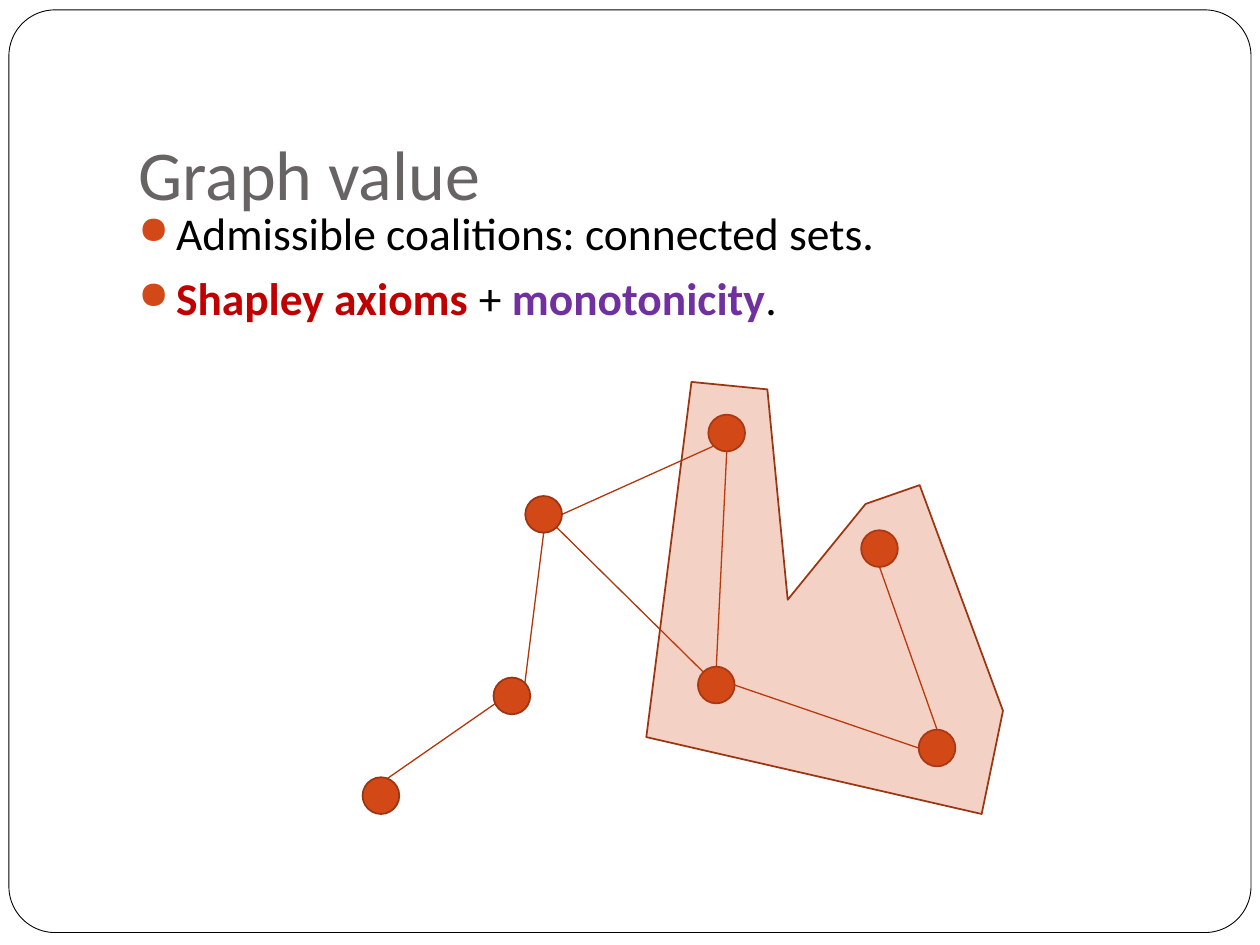
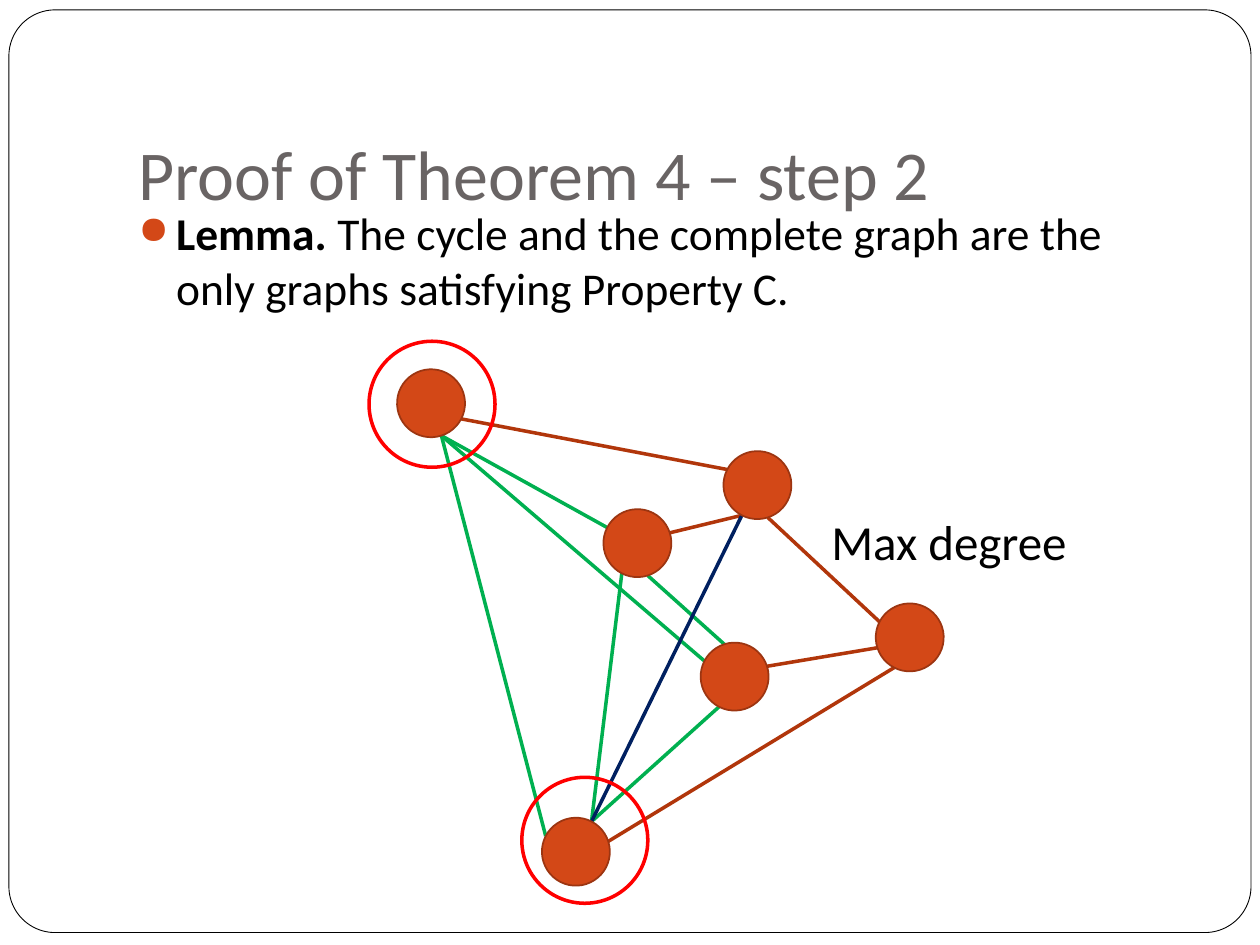
"""Build two graph theory slides: graph value and a lemma proof."""
from math import cos, radians, sin
from typing import NamedTuple

from lxml import etree
from pptx import Presentation
from pptx.dml.color import RGBColor
from pptx.enum.shapes import MSO_CONNECTOR, MSO_SHAPE
from pptx.enum.text import MSO_ANCHOR, MSO_AUTO_SIZE, PP_ALIGN
from pptx.oxml.ns import qn
from pptx.util import Cm, Pt

OVAL = MSO_SHAPE.OVAL
ROUND = MSO_SHAPE.ROUNDED_RECTANGLE
STRAIGHT = MSO_CONNECTOR.STRAIGHT
LEFT = PP_ALIGN.LEFT
BOTTOM = MSO_ANCHOR.BOTTOM
NO_FIT = MSO_AUTO_SIZE.NONE
FIT = MSO_AUTO_SIZE.SHAPE_TO_FIT_TEXT

FONT = "Calibri"
TITLE_ONLY = 5
COLORS = {
    "white": "FFFFFF", "black": "000000", "grey": "696464",
    "orange": "D34817", "rim": "9C3511", "edge": "B1360B",
    "crimson": "C00000", "purple": "7030A0",
    "green": "00B050", "navy": "002060", "red": "FF0000",
}

TOP, TOP_LEFT, SIDE_L, LOW_LEFT, LOW, LOW_RIGHT, SIDE_R, TOP_RIGHT = range(8)


class Span(NamedTuple):
    text: str
    color: str = "black"
    bold: bool = False


class Node(NamedTuple):
    x: float
    y: float


class Edge(NamedTuple):
    start: str
    out: int
    end: str
    into: int
    color: str = "edge"


class Graph(NamedTuple):
    nodes: dict[str, Node]
    edges: list[Edge]
    size: float
    turn: float
    width: float


VALUE = Graph(
    nodes={
        "a": Node(7.68, 16.04), "b": Node(10.32, 14.03), "c": Node(14.44, 13.81),
        "d": Node(17.73, 11.06), "e": Node(10.96, 10.37), "f": Node(14.65, 8.73),
        "g": Node(18.89, 15.08),
    },
    edges=[
        Edge("a", SIDE_L, "b", TOP_RIGHT),
        Edge("b", TOP_RIGHT, "e", LOW),
        Edge("c", TOP_LEFT, "e", LOW_RIGHT),
        Edge("e", SIDE_R, "f", LOW_LEFT),
        Edge("c", TOP, "f", LOW),
        Edge("g", TOP, "d", LOW),
        Edge("g", SIDE_L, "c", SIDE_R),
    ],
    size=0.74, turn=0, width=0.75,
)

PROOF = Graph(
    nodes={
        "p": Node(14.81, 13.64), "q": Node(18.34, 12.85), "r": Node(12.85, 10.95),
        "s": Node(11.61, 17.17), "t": Node(15.27, 9.78), "u": Node(8.69, 8.13),
    },
    edges=[
        Edge("p", TOP_RIGHT, "q", LOW_LEFT),
        Edge("q", LOW, "s", TOP_RIGHT),
        Edge("q", SIDE_L, "t", LOW_RIGHT),
        Edge("r", TOP_RIGHT, "t", LOW),
        Edge("u", SIDE_R, "t", SIDE_L),
        Edge("u", LOW_RIGHT, "r", SIDE_L, "green"),
        Edge("s", TOP, "r", LOW, "green"),
        Edge("u", LOW_RIGHT, "s", SIDE_L, "green"),
        Edge("p", LOW, "s", TOP, "green"),
        Edge("p", TOP_LEFT, "r", LOW_RIGHT, "green"),
        Edge("p", SIDE_L, "u", LOW_RIGHT, "green"),
        Edge("t", LOW, "s", TOP, "navy"),
    ],
    size=1.37, turn=27.3, width=2,
)

RINGS = [Node(8.71, 8.15), Node(11.79, 16.94)]
REGION = [
    (17.45, 10.16), (15.88, 12.09), (15.47, 7.85), (13.94, 7.7),
    (13.03, 14.86), (19.79, 16.41), (20.22, 14.33), (18.54, 9.78),
]


def rgb(name: str) -> RGBColor:
    return RGBColor.from_string(COLORS[name])


def paint(shape, fill: str | None, line: str, width: float) -> None:
    shape.shadow.inherit = False
    if fill:
        shape.fill.solid()
        shape.fill.fore_color.rgb = rgb(fill)
    else:
        shape.fill.background()
    shape.line.color.rgb = rgb(line)
    shape.line.width = Pt(width)


def style(para, size: float, color: str) -> None:
    para.alignment = LEFT
    para.font.name = FONT
    para.font.size = Pt(size)
    para.font.color.rgb = rgb(color)


def add_page(deck, title: str):
    slide = deck.slides.add_slide(deck.slide_layouts[TITLE_ONLY])
    head = slide.shapes.title
    frame = slide.shapes.add_shape(ROUND, Cm(0.18), Cm(0.2), Cm(25.04), Cm(18.6))
    frame.adjustments[0] = 0.05
    paint(frame, "white", "black", 0.5)
    head._element.addprevious(frame._element)
    head.left, head.top, head.width, head.height = Cm(2.54), Cm(0.76), Cm(21.59), Cm(3.81)
    text = head.text_frame
    text.text = title
    text.auto_size = NO_FIT
    text.vertical_anchor = BOTTOM
    text.margin_bottom = Cm(0.25)
    style(text.paragraphs[0], 40, "grey")
    return slide


def add_bullet(para) -> None:
    props = para._p.get_or_add_pPr()
    props.set("marL", str(Cm(0.76)))
    props.set("indent", str(-Cm(0.76)))
    marks = [etree.Element(qn(tag)) for tag in ("a:buClr", "a:buSzPct", "a:buChar")]
    etree.SubElement(marks[0], qn("a:srgbClr"), val=COLORS["orange"])
    marks[1].set("val", "85000")
    marks[2].set("char", "●")
    last = props.find(qn("a:defRPr"))
    for mark in marks:
        last.addprevious(mark)


def add_body(slide, points: list[list[Span]]) -> None:
    box = slide.shapes.add_textbox(Cm(2.54), Cm(4.01), Cm(21.59), Cm(12.7))
    text = box.text_frame
    text.word_wrap = True
    for i, spans in enumerate(points):
        para = text.add_paragraph() if i else text.paragraphs[0]
        para.space_before = Pt(5.8)
        style(para, 26, "black")
        add_bullet(para)
        for span in spans:
            run = para.add_run()
            run.text = span.text
            run.font.bold = span.bold
            run.font.color.rgb = rgb(span.color)


def add_disc(slide, node: Node, size: float, fill: str | None, line: str, width: float):
    left, top = node.x - size / 2, node.y - size / 2
    disc = slide.shapes.add_shape(OVAL, Cm(left), Cm(top), Cm(size), Cm(size))
    paint(disc, fill, line, width)
    return disc


def rim_point(graph: Graph, name: str, site: int) -> tuple[int, int]:
    node = graph.nodes[name]
    angle = radians(graph.turn - 90 - 45 * site)
    half = graph.size / 2
    return Cm(node.x + half * cos(angle)), Cm(node.y + half * sin(angle))


def add_graph(slide, graph: Graph) -> None:
    for edge in graph.edges:
        start = rim_point(graph, edge.start, edge.out)
        end = rim_point(graph, edge.end, edge.into)
        link = slide.shapes.add_connector(STRAIGHT, *start, *end)
        link.line.color.rgb = rgb(edge.color)
        link.line.width = Pt(graph.width)
        etree.SubElement(link._element.spPr, qn("a:effectLst"))
    for node in graph.nodes.values():
        disc = add_disc(slide, node, graph.size, "orange", "rim", 1)
        disc.rotation = graph.turn


def add_region(slide) -> None:
    first, *rest = [(Cm(x), Cm(y)) for x, y in REGION]
    pen = slide.shapes.build_freeform(*first)
    pen.add_line_segments(rest, close=True)
    region = pen.convert_to_shape()
    paint(region, "orange", "rim", 1)
    tint = region._element.spPr.find(qn("a:solidFill"))[0]
    etree.SubElement(tint, qn("a:alpha"), val="25000")


def add_label(slide, words: str) -> None:
    box = slide.shapes.add_textbox(Cm(16.51), Cm(10.19), Cm(5.31), Cm(1.45))
    text = box.text_frame
    text.text = words
    text.word_wrap = False
    text.auto_size = FIT
    style(text.paragraphs[0], 28, "black")


def main() -> None:
    deck = Presentation()
    deck.slide_width, deck.slide_height = Cm(25.4), Cm(19.05)

    slide = add_page(deck, "Graph value")
    add_body(slide, [
        [Span("Admissible coalitions: connected sets.")],
        [Span("Shapley axioms", "crimson", True), Span(" + "),
         Span("monotonicity", "purple", True), Span(".")],
    ])
    add_graph(slide, VALUE)
    add_region(slide)

    slide = add_page(deck, "Proof of Theorem 4 – step 2")
    add_body(slide, [
        [Span("Lemma.", bold=True),
         Span(" The cycle and the complete graph are the only graphs "
              "satisfying Property C.")],
    ])
    add_graph(slide, PROOF)
    for ring in RINGS:
        add_disc(slide, ring, 2.54, None, "red", 2)
    add_label(slide, "Max degree")

    deck.save("out.pptx")


if __name__ == "__main__":
    main()
